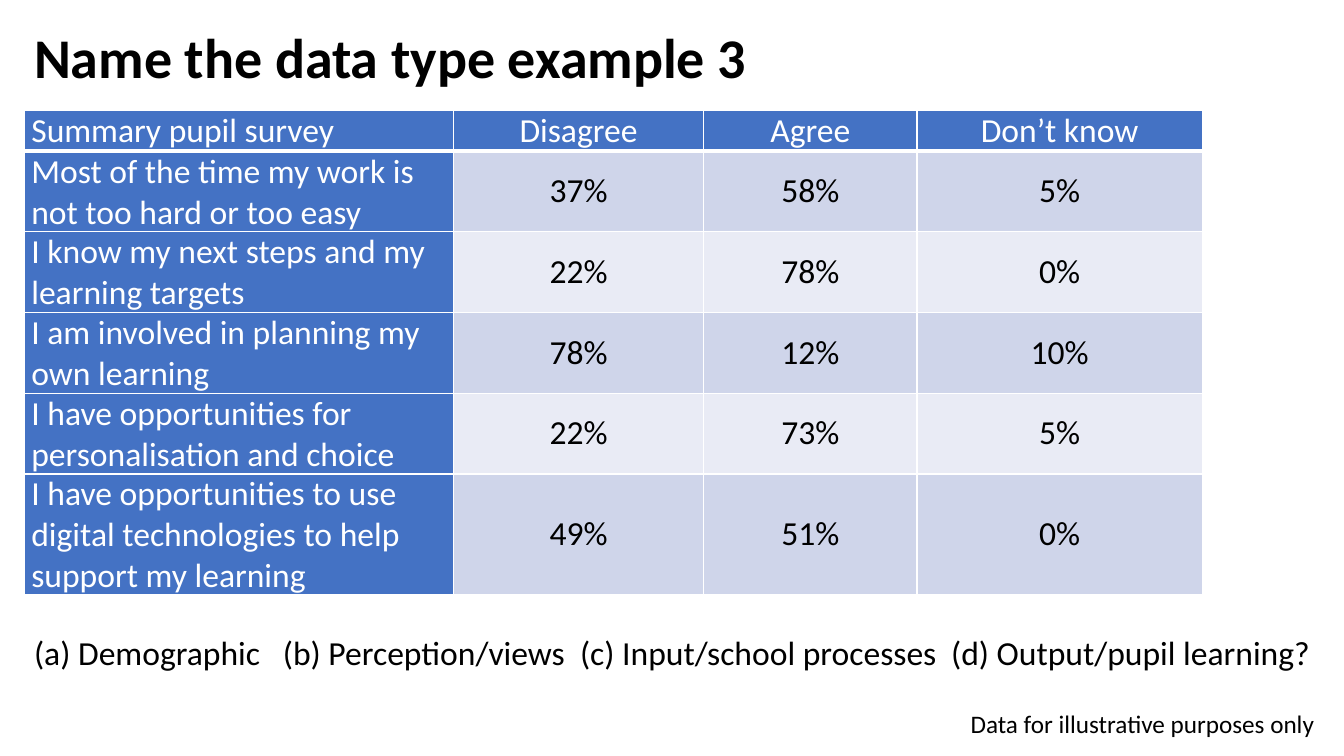
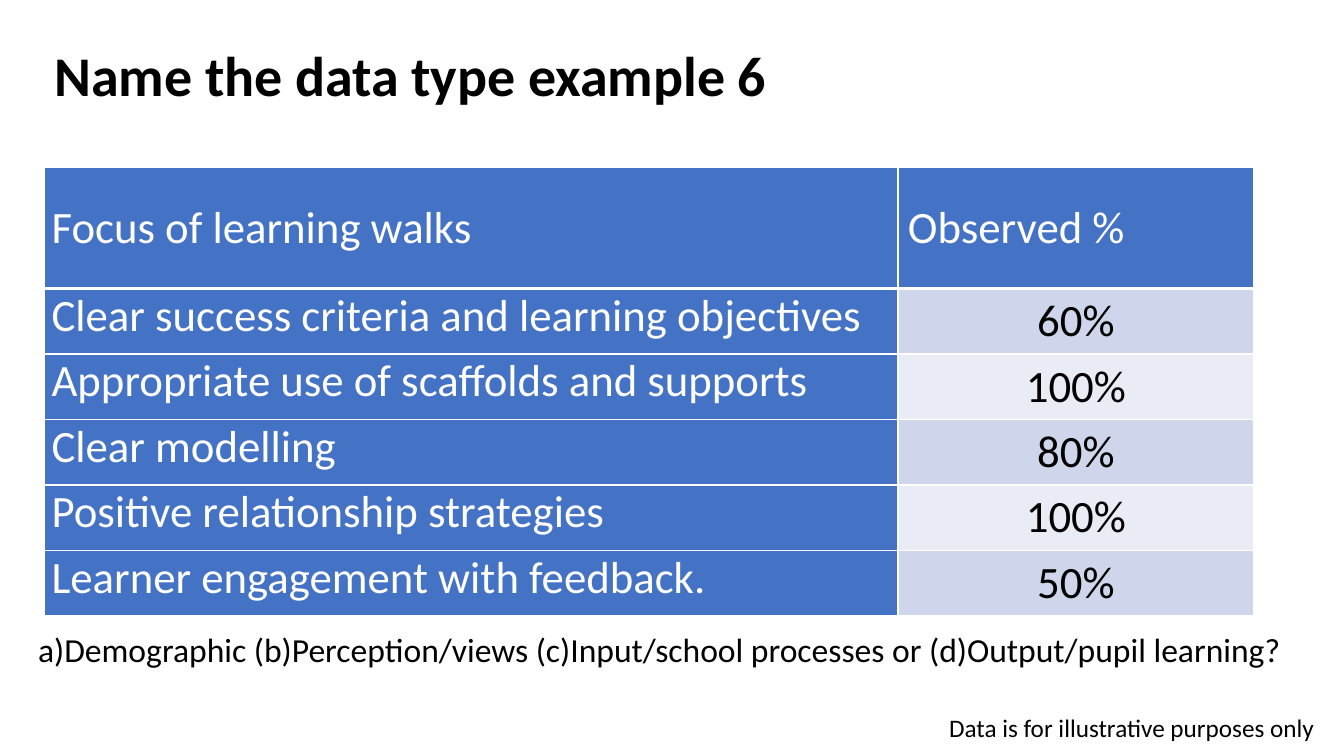
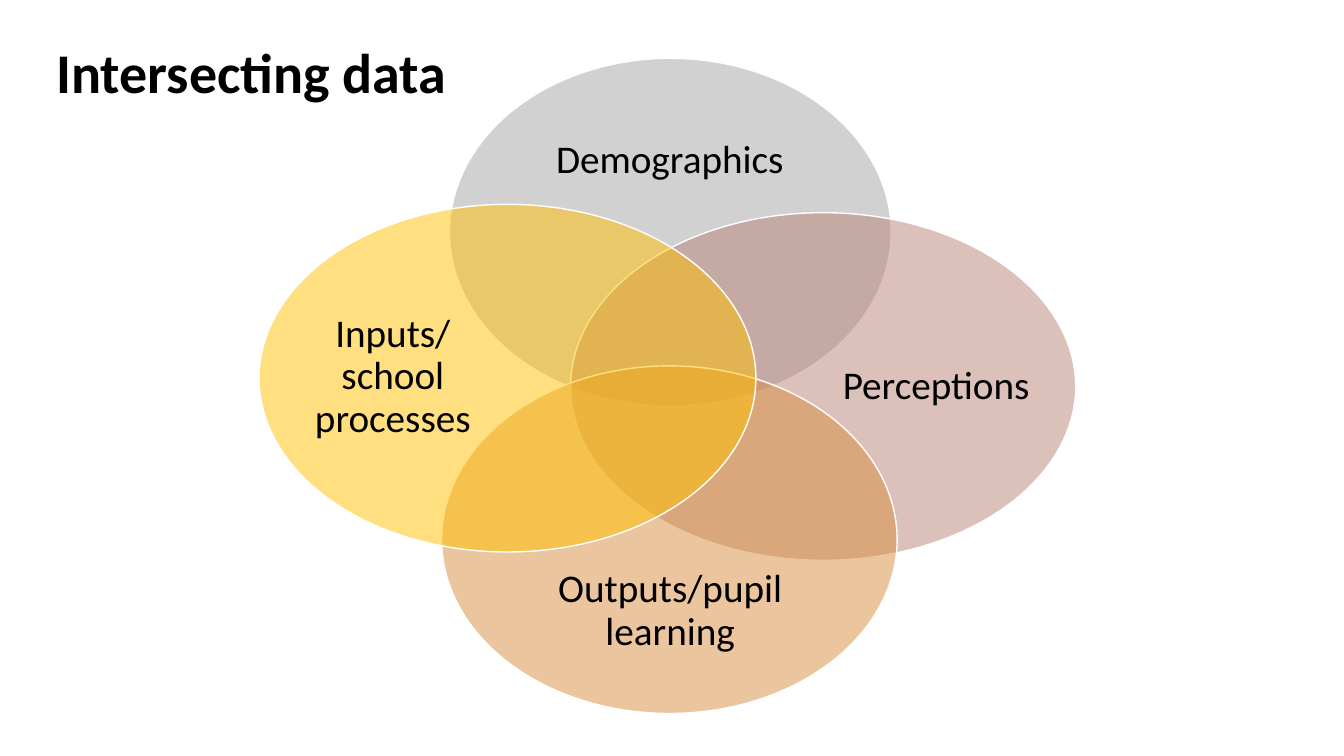
import pptx
import pptx.dml.color
import pptx.enum.shapes
import pptx.enum.text
import pptx.oxml
import pptx.oxml.ns
import pptx.util
import lxml.etree

Cm = pptx.util.Cm
Pt = pptx.util.Pt
ALIGN = pptx.enum.text.PP_ALIGN
ANCHOR = pptx.enum.text.MSO_ANCHOR

FONT = "Calibri"
BLACK = "000000"
WHITE = "FFFFFF"
BLUE = "4472C4"
BANDS = ("CFD5EA", "E9EBF5")
LABEL_INSETS = (0.18, 0, 0.18, 0)
DEFAULT_INSETS = (0.25, 0.13, 0.25, 0.13)


def color(value):
    return pptx.dml.color.RGBColor.from_string(value)


def fill_with(target, value):
    target.fill.solid()
    target.fill.fore_color.rgb = color(value)


def add_child(parent, tag, **attributes):
    child = lxml.etree.SubElement(parent, pptx.oxml.ns.qn(tag))
    for name, value in attributes.items():
        child.set(name, str(value))
    return child


def set_insets(target, insets):
    target.margin_left, target.margin_top, target.margin_right, target.margin_bottom = map(Cm, insets)


def style_text(text_frame, size, font_color=BLACK, bold=False, align=ALIGN.LEFT, spacing=1.0):
    for paragraph in text_frame.paragraphs:
        paragraph.alignment = align
        paragraph.line_spacing = spacing
        for run in paragraph.runs:
            run.font.name = FONT
            run.font.size = Pt(size)
            run.font.bold = bold
            run.font.color.rgb = color(font_color)


def add_text(slide, box, text, size, anchor=ANCHOR.TOP, insets=DEFAULT_INSETS, **style):
    text_frame = slide.shapes.add_textbox(*map(Cm, box)).text_frame
    text_frame.word_wrap = True
    text_frame.vertical_anchor = anchor
    set_insets(text_frame, insets)
    text_frame.text = text
    style_text(text_frame, size, **style)
    return text_frame


def add_title(slide, box, text, anchor=ANCHOR.MIDDLE):
    add_text(slide, box, text, 40, anchor=anchor, bold=True, spacing=0.9)


def add_footnote(slide, box, text):
    add_text(slide, box, text, 18)


def add_tab_stops(paragraph, positions):
    tab_list = add_child(paragraph._p.get_or_add_pPr(), "a:tabLst")
    for position in positions:
        add_child(tab_list, "a:tab", pos=int(Cm(position)), algn="l")


def set_borders(cell, top, bottom):
    properties = cell._tc.get_or_add_tcPr()
    for tag, width in (("a:lnL", 1), ("a:lnR", 1), ("a:lnT", top), ("a:lnB", bottom)):
        line = add_child(properties, tag, w=int(Pt(width)))
        add_child(add_child(line, "a:solidFill"), "a:srgbClr", val=WHITE)


def add_data_table(slide, left, top, widths, heights, rows, size, label_anchor, value_insets, header_align):
    table = slide.shapes.add_table(
        len(rows), len(widths), Cm(left), Cm(top), Cm(sum(widths)), Cm(sum(heights))
    ).table
    table.first_row = table.horz_banding = False
    for column, width in zip(table.columns, widths):
        column.width = Cm(width)
    for row_index, (row, height, texts) in enumerate(zip(table.rows, heights, rows)):
        row.height = Cm(height)
        header = row_index == 0
        for column_index, (cell, text) in enumerate(zip(row.cells, texts)):
            label = column_index == 0
            cell.text_frame.text = text
            cell.vertical_anchor = label_anchor if label and not header else ANCHOR.MIDDLE
            set_insets(cell, LABEL_INSETS if label else value_insets)
            set_borders(cell, 3 if row_index == 1 else 1, 3 if header else 1)
            fill_with(cell, BLUE if header or label else BANDS[(row_index - 1) % 2])
            align = ALIGN.LEFT if label else header_align if header else ALIGN.CENTER
            style_text(cell.text_frame, size, WHITE if header or label else BLACK, align=align)


def add_venn(slide, left, top):
    ellipse_height = 8.76
    sets = [
        ("Demographics", "A5A5A5", (4.8, 0, 11.13), (6.07, 1.19, 8.56, 2.77), ALIGN.CENTER),
        ("Perceptions", "BB8376", (7.85, 3.89, 12.73), (14.71, 4.9, 4.9, 6.73), ALIGN.LEFT),
        ("Outputs/pupil learning", "D98D3F", (4.6, 7.75, 11.48), (5.94, 12.55, 8.84, 2.77), ALIGN.CENTER),
        ("Inputs/ school processes", "FFC000", (0, 3.68, 12.52), (0.97, 4.67, 4.8, 6.73), ALIGN.CENTER),
    ]
    for text, fill, (x, y, width), (label_x, label_y, *label_size), align in sets:
        ellipse = slide.shapes.add_shape(
            pptx.enum.shapes.MSO_SHAPE.OVAL, Cm(left + x), Cm(top + y), Cm(width), Cm(ellipse_height)
        )
        ellipse.shadow.inherit = False
        fill_with(ellipse, fill)
        fill_element = ellipse._element.spPr.find(pptx.oxml.ns.qn("a:solidFill"))
        add_child(fill_element[0], "a:alpha", val=50000)
        ellipse.line.color.rgb = color(WHITE)
        ellipse.line.width = Pt(1)
        add_text(slide, (left + label_x, top + label_y, *label_size), text, 28,
                 anchor=ANCHOR.MIDDLE, insets=(0, 0, 0, 0), align=align, spacing=0.9)


def build_survey(slide):
    add_title(slide, (0.61, 0.58, 22.2, 1.9), "Name the data type example 3")
    rows = [
        ("Summary pupil survey", "Disagree", "Agree", "Don’t know"),
        ("Most of the time my work is not too hard or too easy", "37%", "58%", "5%"),
        ("I know my next steps and my learning targets", "22%", "78%", "0%"),
        ("I am involved in planning my own learning", "78%", "12%", "10%"),
        ("I have opportunities for personalisation and choice", "22%", "73%", "5%"),
        ("I have opportunities to use digital technologies to help support my learning", "49%", "51%", "0%"),
    ]
    add_data_table(slide, 0.61, 2.79, (10.82, 6.3, 5.38, 7.19), (1.02, *[2.01] * 4, 3.02), rows, 24,
                   ANCHOR.MIDDLE, LABEL_INSETS, ALIGN.CENTER)
    choices = ("(a) Demographic", "(b) Perception/views", "(c) Input/school processes",
               "(d) Output/pupil learning?")
    options = add_text(slide, (0.61, 15.29, 33.25, 1.63), "\t".join(choices), 24, spacing=1.5)
    add_tab_stops(options.paragraphs[0], (6.27, 13.76, 23.11))
    add_footnote(slide, (24.21, 17.73, 9.42, 1.02), "Data for illustrative purposes only")


def build_learning_walks(slide):
    add_title(slide, (1.12, 1.09, 22.2, 1.9), "Name the data type example 6", ANCHOR.TOP)
    rows = [
        ("Focus of learning walks", "Observed %"),
        ("Clear success criteria and learning objectives", "60%"),
        ("Appropriate use of scaffolds and supports", "100%"),
        ("Clear modelling", "80%"),
        ("Positive relationship strategies", "100%"),
        ("Learner engagement with feedback.", "50%"),
    ]
    add_data_table(slide, 1.12, 4.22, (21.51, 8.97), (3.05, *[1.65] * 5), rows, 32,
                   ANCHOR.TOP, DEFAULT_INSETS, ALIGN.LEFT)
    add_text(slide, (0.71, 15.72, 32.92, 1.27),
             "a)Demographic (b)Perception/views (c)Input/school processes or (d)Output/pupil learning?", 24)
    add_footnote(slide, (23.67, 17.83, 9.96, 1.02), "Data is for illustrative purposes only")


def build_intersections(slide):
    add_title(slide, (1.17, 0.91, 30.1, 1.98), "Intersecting data")
    add_venn(slide, 6.53, 1.47)


def main():
    presentation = pptx.Presentation()
    presentation.slide_width = Cm(33.87)
    presentation.slide_height = Cm(19.05)
    for build in (build_survey, build_learning_walks, build_intersections):
        build(presentation.slides.add_slide(presentation.slide_layouts[6]))
    presentation.save("out.pptx")


if __name__ == "__main__":
    main()
